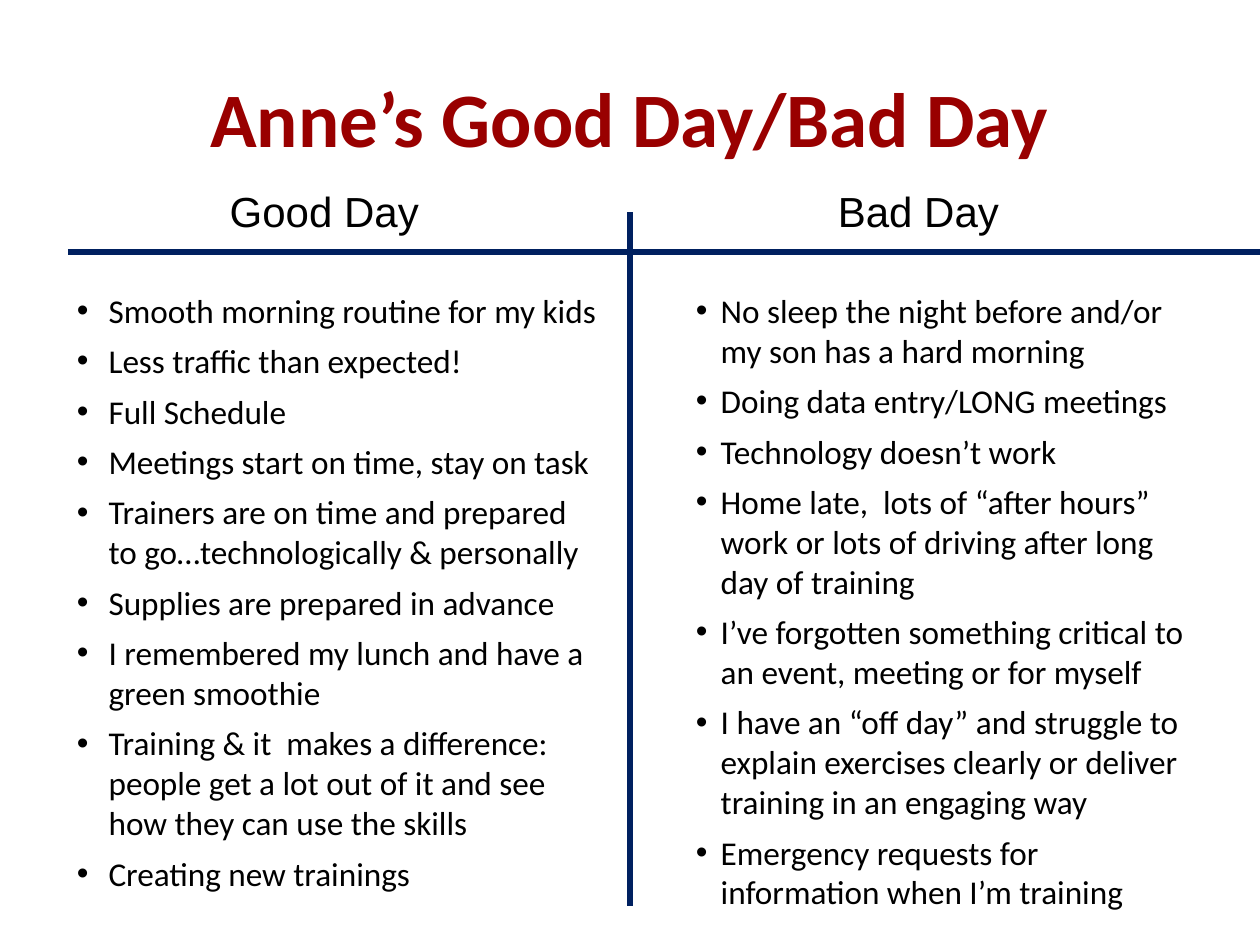
import lxml.etree
import pptx
import pptx.dml.color
import pptx.enum.shapes
import pptx.enum.text
import pptx.oxml.ns
import pptx.util

Cm = pptx.util.Cm
Pt = pptx.util.Pt
RGB = pptx.dml.color.RGBColor
Align = pptx.enum.text.PP_ALIGN
Fit = pptx.enum.text.MSO_AUTO_SIZE
qn = pptx.oxml.ns.qn

RED = RGB(0x99, 0x00, 0x00)
NAVY = RGB(0x00, 0x20, 0x60)
BLACK = RGB(0x00, 0x00, 0x00)

GOOD = [
    "Smooth morning routine for my kids",
    "Less traffic than expected!",
    "Full Schedule",
    "Meetings start on time, stay on task",
    "Trainers are on time and prepared to go…technologically & personally",
    "Supplies are prepared in advance",
    "I remembered my lunch and have a green smoothie",
    "Training & it  makes a difference: people get a lot out of it and see how they can use the skills",
    "Creating new trainings",
]
BAD = [
    "No sleep the night before and/or my son has a hard morning",
    "Doing data entry/LONG meetings",
    "Technology doesn’t work",
    "Home late,  lots of “after hours” work or lots of driving after long day of training",
    "I’ve forgotten something critical to an event, meeting or for myself",
    "I have an “off day” and struggle to explain exercises clearly or deliver training in an engaging way",
    "Emergency requests for information when I’m training",
]


class Board:
    """Style and current slide of the two-column comparison."""
    body = "Calibri"
    label = "Arial"

    def __init__(self, slide):
        self.slide = slide

    def style(self, para, name, size, color, bold=False):
        for run in para.runs:
            font = run.font
            font.name, font.size, font.bold = name, Pt(size), bold
            font.color.rgb = color

    def title(self, text, left, top, width, height):
        shape = self.slide.shapes.title
        shape.left, shape.top = Cm(left), Cm(top)
        shape.width, shape.height = Cm(width), Cm(height)
        frame = shape.text_frame
        frame.text = text
        frame.vertical_anchor = pptx.enum.text.MSO_ANCHOR.MIDDLE
        para = frame.paragraphs[0]
        para.alignment = Align.CENTER
        self.style(para, self.body, 44, RED, True)

    def box(self, text, left, top, width, height, inset):
        shape = self.slide.shapes.add_textbox(
            Cm(left), Cm(top), Cm(width), Cm(height))
        frame = shape.text_frame
        frame.word_wrap = True
        frame.auto_size = Fit.SHAPE_TO_FIT_TEXT
        frame.margin_left = frame.margin_right = Cm(inset)
        frame.margin_top = frame.margin_bottom = Cm(0.13)
        frame.text = text
        return frame

    def head(self, text, left):
        para = self.box(text, left, 3.61, 11.63, 1.27, 0.25).paragraphs[0]
        para.alignment = Align.CENTER
        self.style(para, self.label, 24, BLACK)

    def list(self, items, left, width, height, hang):
        frame = self.box("\n".join(items), left, 5.72, width, height, 0.28)
        for para in frame.paragraphs:
            self.bullet(para, hang)
            para.space_after = Pt(6)
            self.style(para, self.body, 19, BLACK)

    def bullet(self, para, hang):
        props = para._p.get_or_add_pPr()
        props.set("marL", str(Cm(0.64)))
        props.set("indent", str(-Cm(hang)))
        lxml.etree.SubElement(props, qn("a:buFont"), typeface="Arial")
        lxml.etree.SubElement(props, qn("a:buChar"), char="•")

    def line(self, x1, y1, x2, y2):
        rule = self.slide.shapes.add_connector(
            pptx.enum.shapes.MSO_CONNECTOR.STRAIGHT,
            Cm(x1), Cm(y1), Cm(x2), Cm(y2))
        rule.line.color.rgb = NAVY
        rule.line.width = Pt(3)
        lxml.etree.SubElement(rule._element.spPr, qn("a:effectLst"))


def main():
    deck = pptx.Presentation()
    deck.slide_width, deck.slide_height = Cm(25.4), Cm(19.05)
    board = Board(deck.slides.add_slide(deck.slide_layouts[5]))
    board.title("Anne’s Good Day/Bad Day", 1.27, 0.76, 22.86, 3.18)
    board.head("Good Day ", 0.84)
    board.line(12.7, 18.26, 12.7, 4.27)
    board.line(1.37, 5.08, 25.4, 5.08)
    board.head("Bad Day", 12.7)
    board.list(GOOD, 1.27, 11.05, 12.55, 0.64)
    board.list(BAD, 13.61, 10.64, 12.93, 0.5)
    deck.save("out.pptx")


if __name__ == "__main__":
    main()
